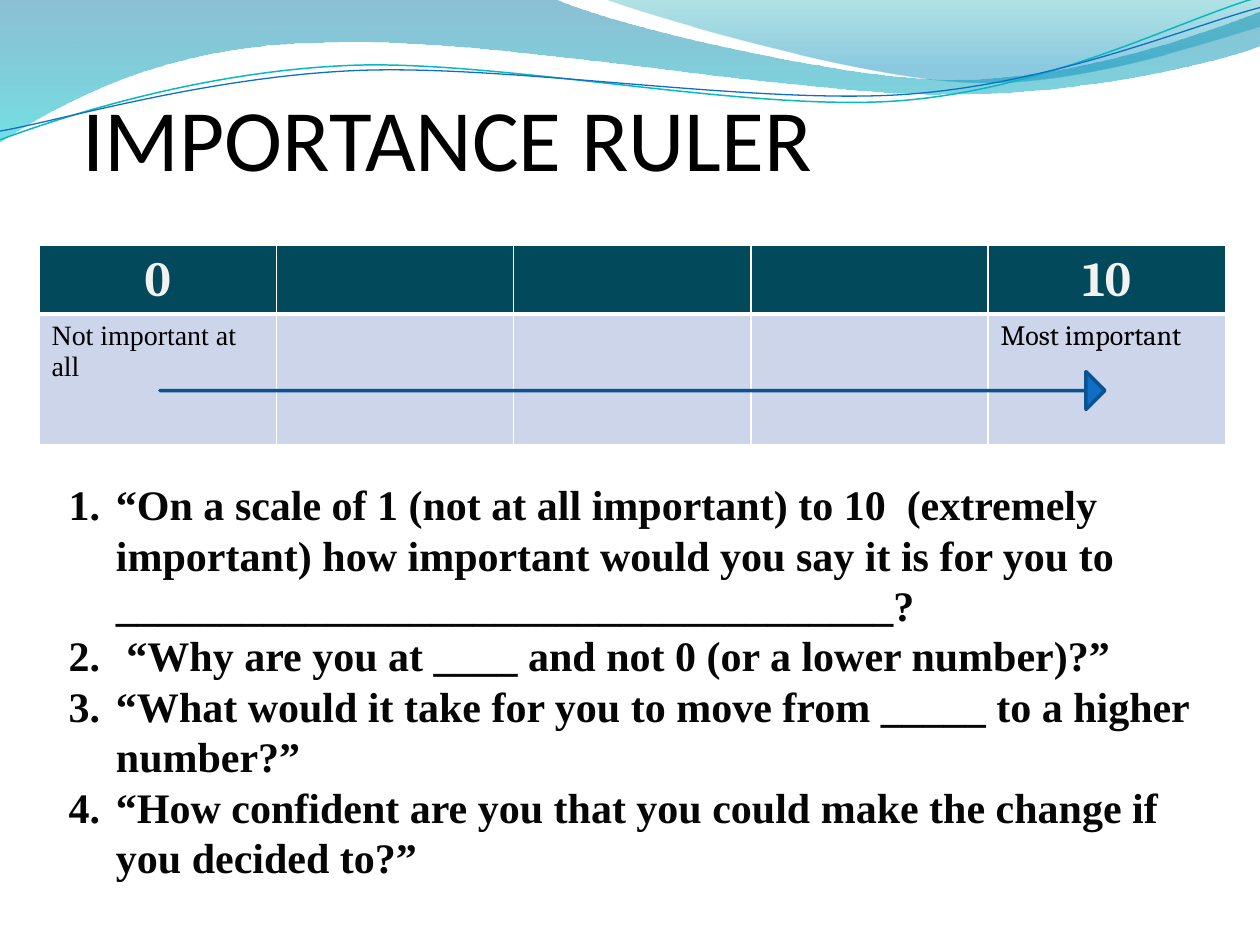
from math import cos, radians, sin

from lxml import etree
from pptx import Presentation
from pptx.dml.color import RGBColor
from pptx.enum.shapes import MSO_SHAPE
from pptx.enum.text import MSO_ANCHOR, PP_ALIGN
from pptx.oxml import parse_xml
from pptx.oxml.ns import nsdecls, qn
from pptx.util import Pt

COLORS = {
    "black": "000000", "ink": "060606", "white": "FFFFFF", "header_text": "F2F2F2",
    "header": "03495C", "body": "CCD5EA", "arrow": "0F6FC6", "arrow_edge": "0B5292",
    "teal_line": "0AB8BF", "blue_line": "0F6FC6",
    "wave_blue": "0074A1", "wave_aqua": "00C6CF", "crest_teal": "00A1A9", "crest_blue": "008BBF",
}
SERIF = "Times New Roman"
TILT = -2.7  # degrees, for the two thin curves

# Outlines in points: a start, then cubic curves (three points) or straight lines (one point)
WAVE = [[(0, -0.7)], [(316.8, -0.7)], [(342.7, 12.2), (478.1, 45.4), (545.8, 45.4)],
        [(614.2, 45.4), (689.8, 18.7), (720, 6.5)], [(720.7, 25.9)],
        [(707.8, 31.7), (626.4, 54.7), (537.1, 54)],
        [(447.8, 54), (275, 20.2), (185, 24.5)], [(92.9, 25.2), (33.1, 59.8), (-0.7, 81.4)]]
CREST = [[(344.9, -0.7)], [(366.5, 7.9), (491, 44.6), (553.7, 46.8)],
         [(616.3, 49.7), (691.9, 23), (720, 15.1)], [(720, 0)]]
TEAL_CURVE = [[(0, 79.9)], [(34.6, 67), (113.8, 41), (199.4, 37.4)],
              [(284.4, 33.8), (427, 64.1), (513.4, 57.6)],
              [(599.8, 51.1), (675.4, 10.8), (718.6, -1.4)]]
BLUE_CURVE = [[(0, 74.9)], [(33.8, 69.1), (118.1, 43.9), (203.8, 40.3)],
              [(290.2, 36.7), (429.8, 59.8), (516.2, 54)],
              [(601.9, 48.2), (679, 15.1), (720, 4.3)]]

QUESTIONS = [
    "“On a scale of 1 (not at all important) to 10  (extremely important) how important "
    "would you say it is for you to " + "_" * 37 + "?",
    " “Why are you at ____ and not 0 (or a lower number)?”",
    "“What would it take for you to move from _____ to a higher number?”",
    "“How confident are you that you could make the change if you decided to?”",
]


def rgb(name):
    return RGBColor.from_string(COLORS[name])


def style(paragraph, size, font, color, bold=False):
    for run in paragraph.runs:
        run.font.size, run.font.name, run.font.bold = Pt(size), font, bold
        run.font.color.rgb = rgb(color)


def turn(outline, degrees, center):
    """Rotate every point of an outline clockwise about a center."""
    c, s = cos(radians(degrees)), sin(radians(degrees))
    x0, y0 = center
    return [[(x0 + (x - x0) * c - (y - y0) * s, y0 + (x - x0) * s + (y - y0) * c)
             for x, y in part] for part in outline]


def add_outline(slide, outline, close):
    """Build a freeform through the end points, then bend its segments into cubic curves."""
    parts = [[(Pt(x), Pt(y)) for x, y in part] for part in outline]
    ends = [part[-1] for part in parts]
    builder = slide.shapes.build_freeform(*ends[0], scale=1.0)
    builder.add_line_segments(ends[1:], close=close)
    shape = builder.convert_to_shape()
    shape.shadow.inherit = False
    lines = list(shape._element.iter(qn("a:lnTo")))
    for line, part in zip(lines, parts[1:]):
        if len(part) == 3:
            curve = etree.Element(qn("a:cubicBezTo"))
            for x, y in part:
                etree.SubElement(curve, qn("a:pt"), x=str(x - shape.left), y=str(y - shape.top))
            line.getparent().replace(line, curve)
    return shape


def add_wave(slide, outline, stops):
    shape = add_outline(slide, outline, True)
    shape.line.fill.background()
    stop_xml = "".join(
        f'<a:gs pos="{position * 1000}"><a:srgbClr val="{COLORS[color]}">'
        f'<a:alpha val="{alpha * 1000}"/></a:srgbClr></a:gs>'
        for position, color, alpha in stops)
    gradient = parse_xml(f'<a:gradFill {nsdecls("a")} rotWithShape="1"><a:gsLst>{stop_xml}'
                         '</a:gsLst><a:lin ang="5400000" scaled="0"/></a:gradFill>')
    shape._element.spPr.find(qn("a:custGeom")).addnext(gradient)


def add_curve(slide, outline, center, color, width):
    shape = add_outline(slide, turn(outline, -TILT, center), False)
    shape.rotation = TILT
    shape.fill.background()
    shape.line.color.rgb, shape.line.width = rgb(color), Pt(width)


def add_banner(slide):
    add_wave(slide, WAVE, [(0, "wave_blue", 45), (100, "wave_aqua", 55)])
    add_wave(slide, CREST, [(0, "crest_teal", 30), (80, "crest_blue", 45)])
    add_curve(slide, TEAL_CURVE, (359.3, 41.4), "teal_line", 0.85)
    add_curve(slide, BLUE_CURVE, (359.6, 42.5), "blue_line", 0.75)


def add_title(slide, left, top, width, height):
    frame = slide.shapes.add_textbox(Pt(left), Pt(top), Pt(width), Pt(height)).text_frame
    frame.word_wrap, frame.vertical_anchor = True, MSO_ANCHOR.BOTTOM
    frame.margin_left = frame.margin_right = frame.margin_bottom = 0
    frame.text = " IMPORTANCE RULER"
    style(frame.paragraphs[0], 50, "Calibri", "black")


def set_borders(cell, bottom):
    properties = cell._tc.get_or_add_tcPr()
    for index, (side, width) in enumerate((("L", 1), ("R", 1), ("T", 1), ("B", bottom))):
        properties.insert(index, parse_xml(
            f'<a:ln{side} {nsdecls("a")} w="{Pt(width)}"><a:solidFill>'
            f'<a:srgbClr val="{COLORS["white"]}"/></a:solidFill></a:ln{side}>'))


def add_ruler(slide, left, top, width, row_heights):
    columns = 5
    table = slide.shapes.add_table(2, columns, Pt(left), Pt(top), Pt(width),
                                   Pt(sum(row_heights))).table
    for column in table.columns:
        column.width = Pt(width / columns)
    for row, height in zip(table.rows, row_heights):
        row.height = Pt(height)
    for row, (fill, bottom) in enumerate((("header", 3), ("body", 1))):
        for column in range(columns):
            cell = table.cell(row, column)
            cell.margin_bottom = Pt(1.8)
            cell.fill.solid()
            cell.fill.fore_color.rgb = rgb(fill)
            set_borders(cell, bottom)
    # Both ends of the scale
    for column, number, label, font in ((0, "0", "Not important at all", SERIF),
                                        (columns - 1, "10", "Most important", "Cambria")):
        head, body = table.cell(0, column), table.cell(1, column)
        head.text, body.text = number, label
        head.text_frame.paragraphs[0].alignment = PP_ALIGN.CENTER
        style(head.text_frame.paragraphs[0], 28, "Cambria", "header_text", True)
        style(body.text_frame.paragraphs[0], 16, font, "black")


def add_scale_arrow(slide, left, top, width, height):
    arrow = slide.shapes.add_shape(MSO_SHAPE.RIGHT_ARROW, Pt(left), Pt(top),
                                   Pt(width), Pt(height))
    arrow.shadow.inherit = False
    arrow.adjustments[0], arrow.adjustments[1] = 0, 0.5
    arrow.fill.solid()
    arrow.fill.fore_color.rgb = rgb("arrow")
    arrow.line.color.rgb, arrow.line.width = rgb("arrow_edge"), Pt(2)


def add_questions(slide, left, top, width, height):
    frame = slide.shapes.add_textbox(Pt(left), Pt(top), Pt(width), Pt(height)).text_frame
    frame.word_wrap = True
    for index, question in enumerate(QUESTIONS):
        paragraph = frame.add_paragraph() if index else frame.paragraphs[0]
        paragraph.text = question
        style(paragraph, 24, SERIF, "ink", True)
        properties = paragraph._p.get_or_add_pPr()
        properties.set("marL", str(Pt(27)))
        properties.set("indent", str(-Pt(27)))
        etree.SubElement(properties, qn("a:buAutoNum"), type="arabicPeriod")


def main():
    presentation = Presentation()
    presentation.slide_width, presentation.slide_height = Pt(720), Pt(540)
    slide = presentation.slides.add_slide(presentation.slide_layouts[6])
    add_banner(slide)
    add_title(slide, 36, 18, 648, 90)
    add_ruler(slide, 22.3, 140.4, 678, (36, 75))
    add_scale_arrow(slide, 91.4, 212.4, 540, 21.6)
    add_questions(slide, 32.2, 270, 662.4, 264)
    presentation.save("out.pptx")


if __name__ == "__main__":
    main()
